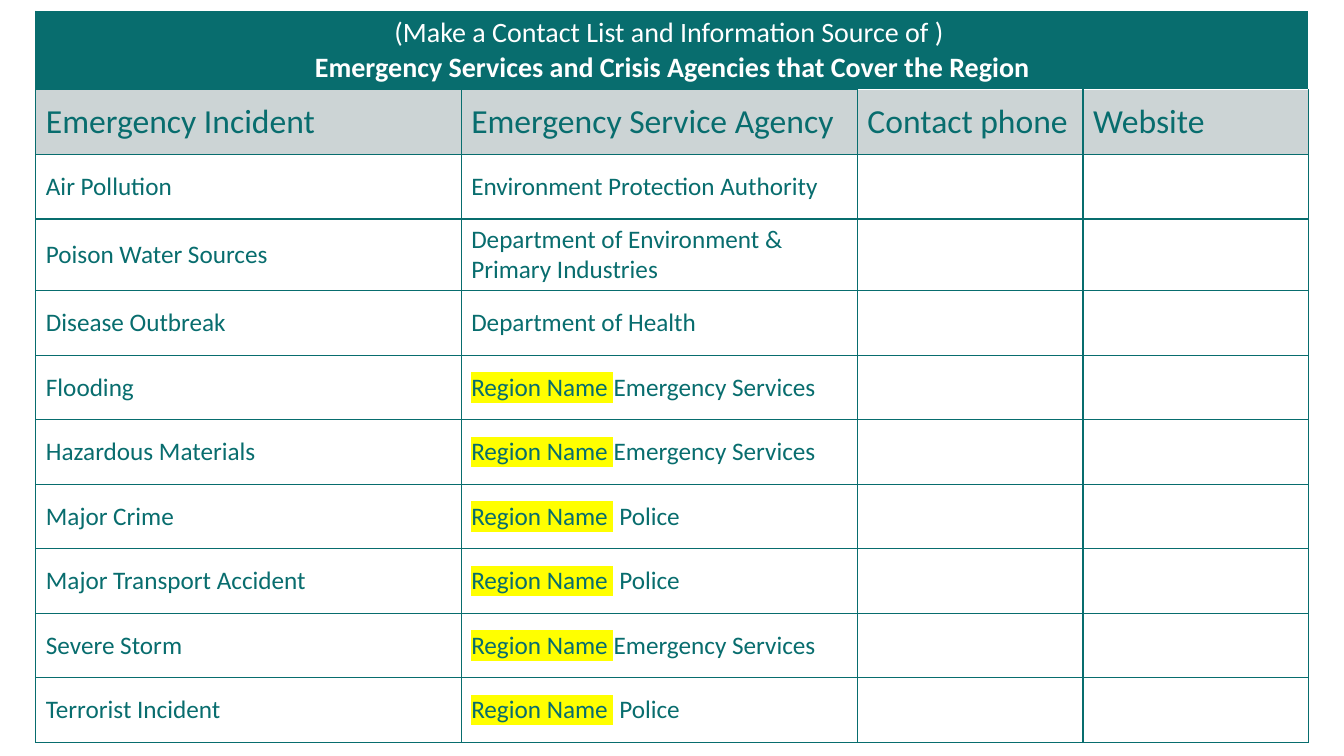
from dataclasses import dataclass

from lxml import etree
from pptx import Presentation
from pptx import util as u
from pptx.dml import color
from pptx.enum import text
from pptx.oxml import ns


@dataclass(frozen=True)
class Theme:
    """Colours and type sizes of the contact list."""
    teal: str = "086D6E"
    grey: str = "CCD4D5"
    white: str = "FFFFFF"
    yellow: str = "FFFF00"
    font: str = "Calibri"
    banner_size: int = 20
    heading_size: int = 24
    body_size: int = 18
    border: int = 1


THEME = Theme()
BANNER = ["(Make a Contact List and Information Source of ) ",
          "Emergency Services and Crisis Agencies that Cover the Region"]
HEADINGS = ["Emergency Incident", "Emergency Service Agency", "Contact phone", "Website"]
REGION = "Region Name "
EMERGENCY = [REGION, "Emergency Services"]
POLICE = [REGION, " Police"]
INCIDENTS = [
    ("Air Pollution", ["Environment Protection Authority"]),
    ("Poison Water Sources", ["Department of Environment & Primary Industries"]),
    ("Disease Outbreak", ["Department of Health"]),
    ("Flooding", EMERGENCY),
    ("Hazardous Materials", EMERGENCY),
    ("Major Crime", POLICE),
    ("Major Transport Accident", POLICE),
    ("Severe Storm", EMERGENCY),
    ("Terrorist Incident", POLICE),
]
COLUMN_WIDTHS = [303.84, 282.96, 161.28, 161.28]
ROW_HEIGHT = 46.1


def add_line(parent, tag, colour):
    """Append a solid cell border of the given colour."""
    border = etree.SubElement(parent, ns.qn(f"a:{tag}"), w=str(u.Pt(THEME.border)))
    fill = etree.SubElement(border, ns.qn("a:solidFill"))
    etree.SubElement(fill, ns.qn("a:srgbClr"), val=colour)


def style_cell(cell, fill, **edges):
    """Centre a cell vertically, border it in teal save for the given edges, and fill it."""
    cell.vertical_anchor = text.MSO_ANCHOR.MIDDLE
    properties = cell._tc.get_or_add_tcPr()
    for tag in ("lnL", "lnR", "lnT", "lnB"):
        add_line(properties, tag, edges.get(tag, THEME.teal))
    cell.fill.solid()
    cell.fill.fore_color.rgb = color.RGBColor.from_string(fill)


def add_words(paragraph, words, colour, highlight=None, **formats):
    """Add one formatted run, highlighted if a colour is given."""
    run = paragraph.add_run()
    run.text = words
    for name, value in {"name": THEME.font, "bold": False, **formats}.items():
        setattr(run.font, name, value)
    run.font.color.rgb = color.RGBColor.from_string(colour)
    if highlight:
        marker = etree.Element(ns.qn("a:highlight"))
        etree.SubElement(marker, ns.qn("a:srgbClr"), val=highlight)
        run._r.rPr.find(ns.qn("a:solidFill")).addnext(marker)


def fill_banner(contacts):
    """Write the two-line banner across the top row."""
    banner = contacts.cell(0, 0)
    banner.merge(contacts.cell(0, len(HEADINGS) - 1))
    style_cell(banner, THEME.teal, lnR=THEME.white)
    frame = banner.text_frame
    for paragraph, words, bold in zip((frame.paragraphs[0], frame.add_paragraph()),
                                      BANNER, (False, True)):
        paragraph.alignment = text.PP_ALIGN.CENTER
        add_words(paragraph, words, THEME.white, size=u.Pt(THEME.banner_size), bold=bold)


def fill_headings(contacts):
    """Write the column headings."""
    for column, heading in enumerate(HEADINGS):
        cell = contacts.cell(1, column)
        edges = {"lnT": THEME.white} if column >= 2 else {}
        style_cell(cell, THEME.grey, **edges)
        add_words(cell.text_frame.paragraphs[0], heading, THEME.teal,
                  size=u.Pt(THEME.heading_size))


def fill_incidents(contacts):
    """Write each incident with its agency, leaving the contact cells open."""
    for row, (incident, agency) in enumerate(INCIDENTS, start=2):
        for column, pieces in enumerate(([incident], agency, [], [])):
            cell = contacts.cell(row, column)
            style_cell(cell, THEME.white)
            for words in pieces:
                add_words(cell.text_frame.paragraphs[0], words, THEME.teal,
                          THEME.yellow if words == REGION else None,
                          size=u.Pt(THEME.body_size))


def add_contact_list(slide, left, top):
    """Place the contact table with its corner at the given point."""
    row_count = len(INCIDENTS) + 2
    contacts = slide.shapes.add_table(
        row_count, len(HEADINGS), u.Pt(left), u.Pt(top),
        u.Pt(sum(COLUMN_WIDTHS)), u.Pt(ROW_HEIGHT * row_count)).table
    contacts.first_row = contacts.horz_banding = False
    for column, width in zip(contacts.columns, COLUMN_WIDTHS):
        column.width = u.Pt(width)
    for row in contacts.rows:
        row.height = u.Pt(ROW_HEIGHT)
    fill_banner(contacts)
    fill_headings(contacts)
    fill_incidents(contacts)


def main():
    """Build and save the contact list slide."""
    deck = Presentation()
    deck.slide_width, deck.slide_height = u.Pt(960), u.Pt(540)
    add_contact_list(deck.slides.add_slide(deck.slide_layouts[6]), 25.6, 8)
    deck.save("out.pptx")


if __name__ == "__main__":
    main()
